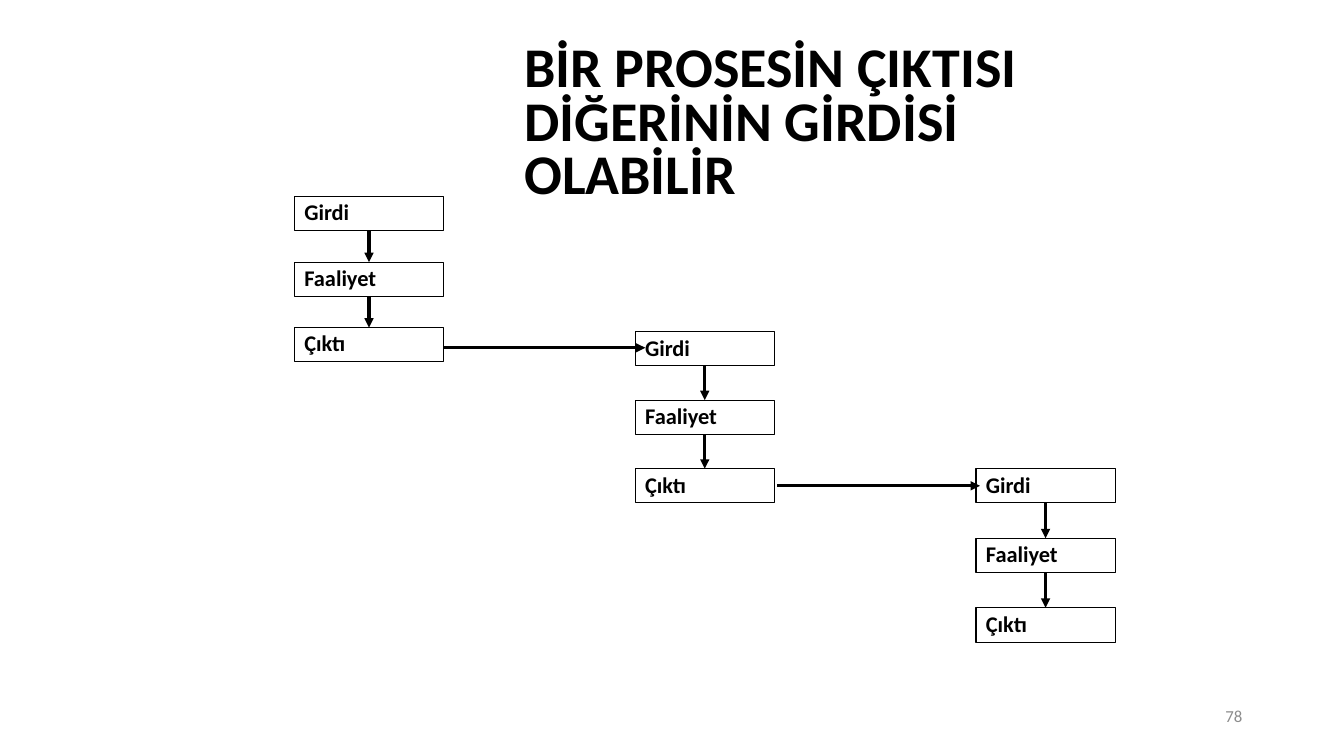
from itertools import pairwise

from lxml import etree
from pptx import Presentation
from pptx.dml.color import RGBColor
from pptx.enum.shapes import MSO_CONNECTOR, MSO_SHAPE
from pptx.enum.text import MSO_ANCHOR, MSO_AUTO_SIZE, PP_ALIGN
from pptx.oxml.ns import qn
from pptx.util import Emu, Pt

RECT = MSO_SHAPE.RECTANGLE
STRAIGHT = MSO_CONNECTOR.STRAIGHT
TOP, MIDDLE = MSO_ANCHOR.TOP, MSO_ANCHOR.MIDDLE
LEFT, RIGHT = PP_ALIGN.LEFT, PP_ALIGN.RIGHT
FIXED_SIZE = MSO_AUTO_SIZE.NONE
TOP_SIDE, BOTTOM_SIDE = 0, 2
PX = 9144  # 100 px to the inch
TITLE_ONLY = 5
COLORS = {"ink": "000000", "number": "8C8C8C"}


def px(*lengths):
    return [Emu(length * PX) for length in lengths]


class ProcessSlide:
    font = "Calibri"

    def __init__(self, prs):
        self.slide = prs.slides.add_slide(prs.slide_layouts[TITLE_ONLY])
        self.shapes = self.slide.shapes

    def color(self, name):
        return RGBColor.from_string(COLORS[name])

    def set_text(self, shape, text, size, color="ink", bold=True,
                 align=LEFT, anchor=TOP, spacing=1.0, before=0):
        frame = shape.text_frame
        frame.text = text
        frame.word_wrap = True
        frame.auto_size = FIXED_SIZE
        frame.vertical_anchor = anchor
        paragraph = frame.paragraphs[0]
        paragraph.alignment = align
        paragraph.line_spacing = spacing
        paragraph.space_before = Pt(before)
        font = paragraph.font
        font.name, font.size, font.bold = self.font, Pt(size), bold
        font.color.rgb = self.color(color)

    def title(self, text, left, top, width, height):
        heading = self.shapes.title
        heading.left, heading.top, heading.width, heading.height = px(left, top, width, height)
        self.set_text(heading, text, 40, spacing=0.8, before=3.8)

    def page_number(self, text, left, top, width, height):
        number = self.shapes.add_textbox(*px(left, top, width, height))
        self.set_text(number, text, 12, color="number", bold=False, align=RIGHT)

    def step(self, text, left, top, width, height):
        box = self.shapes.add_shape(RECT, *px(left, top, width, height))
        box.shadow.inherit = False
        box.fill.background()
        box.line.color.rgb = self.color("ink")
        box.line.width = Pt(0.75)
        self.set_text(box, text, 16, anchor=MIDDLE, spacing=0.9)
        return box

    def arrow(self, x1=0, y1=0, x2=0, y2=0):
        link = self.shapes.add_connector(STRAIGHT, *px(x1, y1, x2, y2))
        link.line.color.rgb = self.color("ink")
        link.line.width = Pt(2.25)
        properties = link.element.spPr
        outline = properties.find(qn("a:ln"))
        etree.SubElement(outline, qn("a:tailEnd"), type="triangle")
        etree.SubElement(properties, qn("a:effectLst"))
        return link

    def process(self, left, top, width, pitch):
        steps = [self.step(name, left, top + row * pitch, width, 34)
                 for row, name in enumerate(("Girdi", "Faaliyet", "Çıktı"))]
        for upper, lower in pairwise(steps):
            link = self.arrow()
            link.begin_connect(upper, BOTTOM_SIDE)
            link.end_connect(lower, TOP_SIDE)


def main():
    prs = Presentation()
    prs.slide_width, prs.slide_height = px(1333, 750)
    page = ProcessSlide(prs)

    # Title
    page.title("BİR PROSESİN ÇIKTISI DİĞERİNİN GİRDİSİ OLABİLİR", 510, 39, 562, 180)

    # Three processes: left, top, width, distance between steps
    for left, top, width, pitch in ((292, 195, 148, 65),
                                    (630, 329, 138, 68),
                                    (968, 465, 138, 69)):
        page.process(left, top, width, pitch)

    # Output of one process into the input of the next
    page.arrow(440, 345, 640, 345)
    page.arrow(771, 482, 972, 482)

    # Page number
    page.page_number("78", 942, 695, 300, 40)

    prs.save("out.pptx")


if __name__ == "__main__":
    main()
